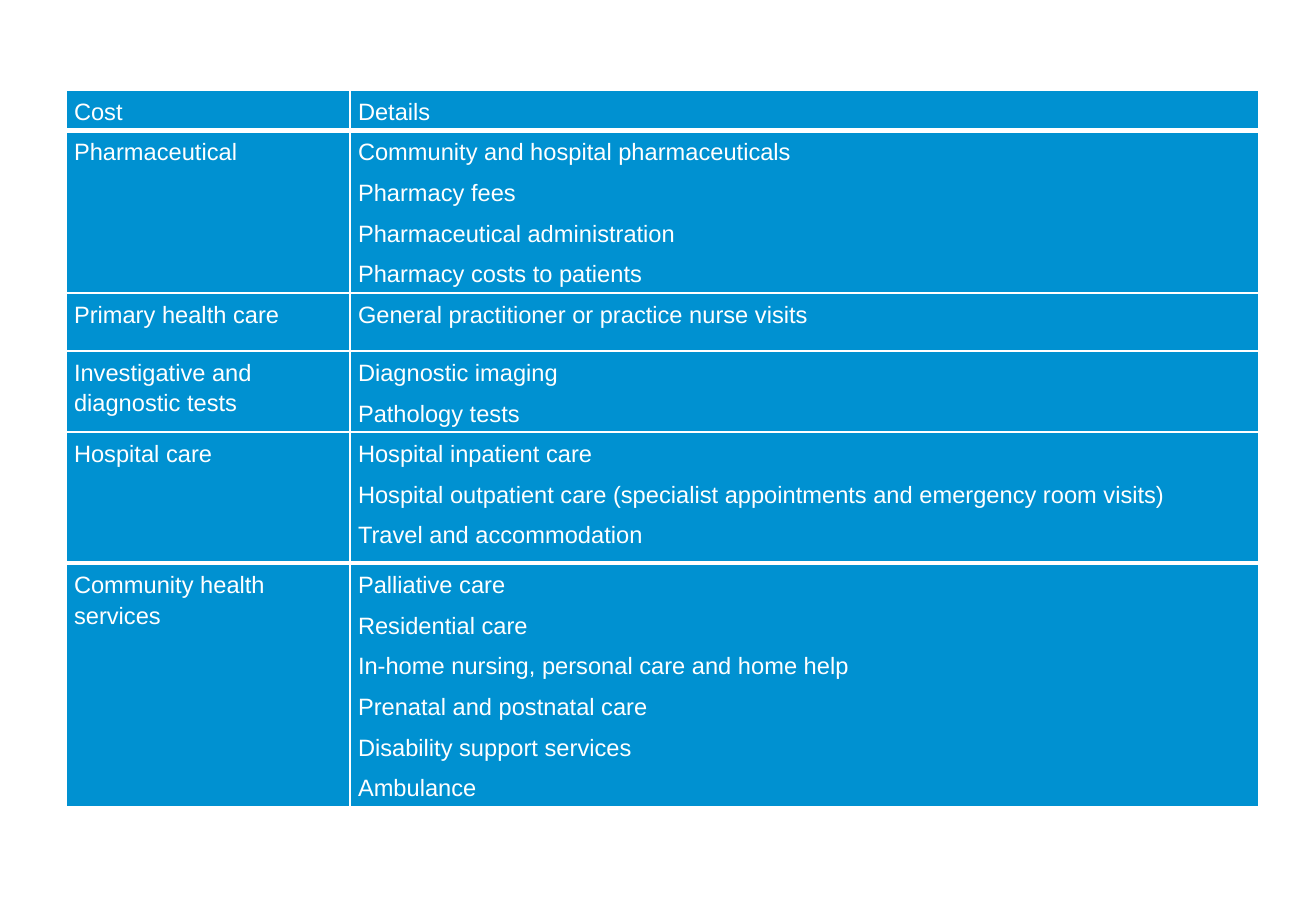
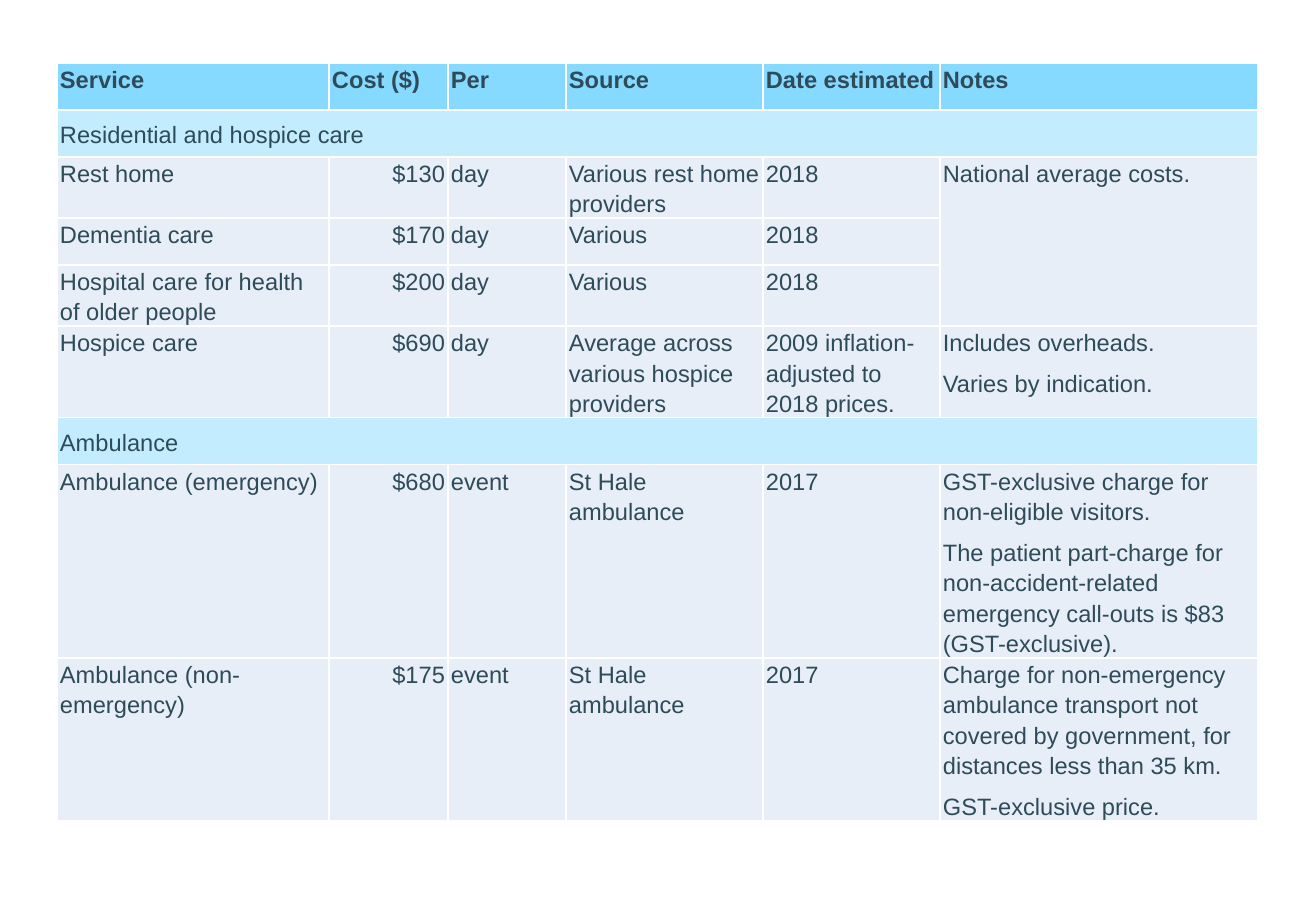
import pptx
import pptx.dml.color
import pptx.enum.text
import pptx.oxml
import pptx.oxml.ns
import pptx.util

PX = 914400 / 121.5
FONT = "Arial"
WHITE = "FFFFFF"
BLUE = "0091D1"
INK = "2E4B59"
HEADER_BLUE = "87DAFF"
SECTION_BLUE = "C3EDFF"
BODY_BLUE = "E7EEF7"
LEFT = pptx.enum.text.PP_ALIGN.LEFT
RIGHT = pptx.enum.text.PP_ALIGN.RIGHT
TOP = pptx.enum.text.MSO_ANCHOR.TOP
MIDDLE = pptx.enum.text.MSO_ANCHOR.MIDDLE

COST_TYPES = [
    ("Cost", "Details"),
    ("Pharmaceutical",
     "Community and hospital pharmaceuticals\nPharmacy fees\n"
     "Pharmaceutical administration\nPharmacy costs to patients"),
    ("Primary health care", "General practitioner or practice nurse visits"),
    ("Investigative and diagnostic tests", "Diagnostic imaging\nPathology tests"),
    ("Hospital care",
     "Hospital inpatient care\n"
     "Hospital outpatient care (specialist appointments and emergency room visits)\n"
     "Travel and accommodation"),
    ("Community health services",
     "Palliative care\nResidential care\nIn-home nursing, personal care and home help\n"
     "Prenatal and postnatal care\nDisability support services\nAmbulance"),
]

SERVICES = [
    ("Service", "Cost ($)", "Per", "Source", "Date estimated", "Notes"),
    ("Residential and hospice care",),
    ("Rest home", "$130", "day", "Various rest home providers", "2018",
     "National average costs."),
    ("Dementia care", "$170", "day", "Various", "2018"),
    ("Hospital care for health of older people", "$200", "day", "Various", "2018"),
    ("Hospice care", "$690", "day", "Average across various hospice providers",
     "2009 inflation-adjusted to 2018 prices.",
     "Includes overheads.\nVaries by indication."),
    ("Ambulance",),
    ("Ambulance (emergency)", "$680", "event", "St Hale ambulance", "2017",
     "GST-exclusive charge for non-eligible visitors.\n"
     "The patient part-charge for non-accident-related emergency call-outs is $83 "
     "(GST-exclusive)."),
    ("Ambulance (non-emergency)", "$175", "event", "St Hale ambulance", "2017",
     "Charge for non-emergency ambulance transport not covered by government, "
     "for distances less than 35 km.\nGST-exclusive price."),
]


def px(length):
    return pptx.util.Emu(round(length * PX))


def rgb(value):
    return pptx.dml.color.RGBColor.from_string(value)


def write(frame, text, color=INK, bold=False, align=LEFT):
    for index, line in enumerate(text.split("\n")):
        para = frame.paragraphs[0] if index == 0 else frame.add_paragraph()
        para.alignment = align
        para.line_spacing = 1.15
        para.space_after = pptx.util.Pt(6)
        span = para.add_run()
        span.text = line
        span.font.name = FONT
        span.font.size = pptx.util.Pt(14)
        span.font.bold = bold
        span.font.color.rgb = rgb(color)


def set_borders(cell, top=1, bottom=1):
    properties = cell._tc.get_or_add_tcPr()
    for side, points in (("L", 1), ("R", 1), ("T", top), ("B", bottom)):
        properties.append(pptx.oxml.parse_xml(
            f'<a:ln{side} {pptx.oxml.ns.nsdecls("a")} w="{pptx.util.Pt(points)}">'
            f'<a:solidFill><a:srgbClr val="{WHITE}"/></a:solidFill></a:ln{side}>'))


def style_cell(cell, text, fill, margins, top=1, bottom=1, anchor=TOP, **text_format):
    set_borders(cell, top, bottom)
    cell.fill.solid()
    cell.fill.fore_color.rgb = rgb(fill)
    across, down = margins
    cell.margin_left = cell.margin_right = px(across)
    cell.margin_top = cell.margin_bottom = px(down)
    cell.vertical_anchor = anchor
    write(cell.text_frame, text, **text_format)


def add_grid(page, box, widths, heights):
    frame = page.shapes.add_table(len(heights), len(widths), *map(px, box))
    table = frame.table
    table.first_row = False
    table.horz_banding = False
    for column, width in zip(table.columns, widths):
        column.width = px(width)
    for row, height in zip(table.rows, heights):
        row.height = px(height)
    frame.height = px(box[3])
    return table


def add_cost_types(page, box):
    name_width = 284
    table = add_grid(page, box, [name_width, box[2] - name_width],
                     [34, 142, 58, 69, 131, 215])
    last = len(COST_TYPES) - 1
    for row, texts in enumerate(COST_TYPES):
        for column, text in enumerate(texts):
            style_cell(table.cell(row, column), text, BLUE, (8, 5), color=WHITE,
                       top=3 if row in (1, last) else 1,
                       bottom=3 if row in (0, last - 1) else 1)


def add_services(page, box):
    table = add_grid(page, box, [272, 119, 118, 197, 177, 318], [47] * len(SERVICES))
    notes_column = len(SERVICES[0]) - 1
    table.cell(2, notes_column).merge(table.cell(4, notes_column))
    for row, texts in enumerate(SERVICES):
        header, section = row == 0, len(texts) == 1
        if section:
            table.cell(row, 0).merge(table.cell(row, notes_column))
        fill = HEADER_BLUE if header else SECTION_BLUE if section else BODY_BLUE
        for column, text in enumerate(texts):
            style_cell(table.cell(row, column), text, fill, (3, 0), bold=header,
                       anchor=MIDDLE if section else TOP,
                       align=RIGHT if column == 1 and not header else LEFT)


def main():
    deck = pptx.Presentation()
    deck.slide_width, deck.slide_height = px(1316), px(911)
    blank = deck.slide_layouts[6]
    add_cost_types(deck.slides.add_slide(blank), (66, 90, 1193, 744))
    add_services(deck.slides.add_slide(blank), (57, 63, 1201, 798))
    deck.save("out.pptx")


if __name__ == "__main__":
    main()
